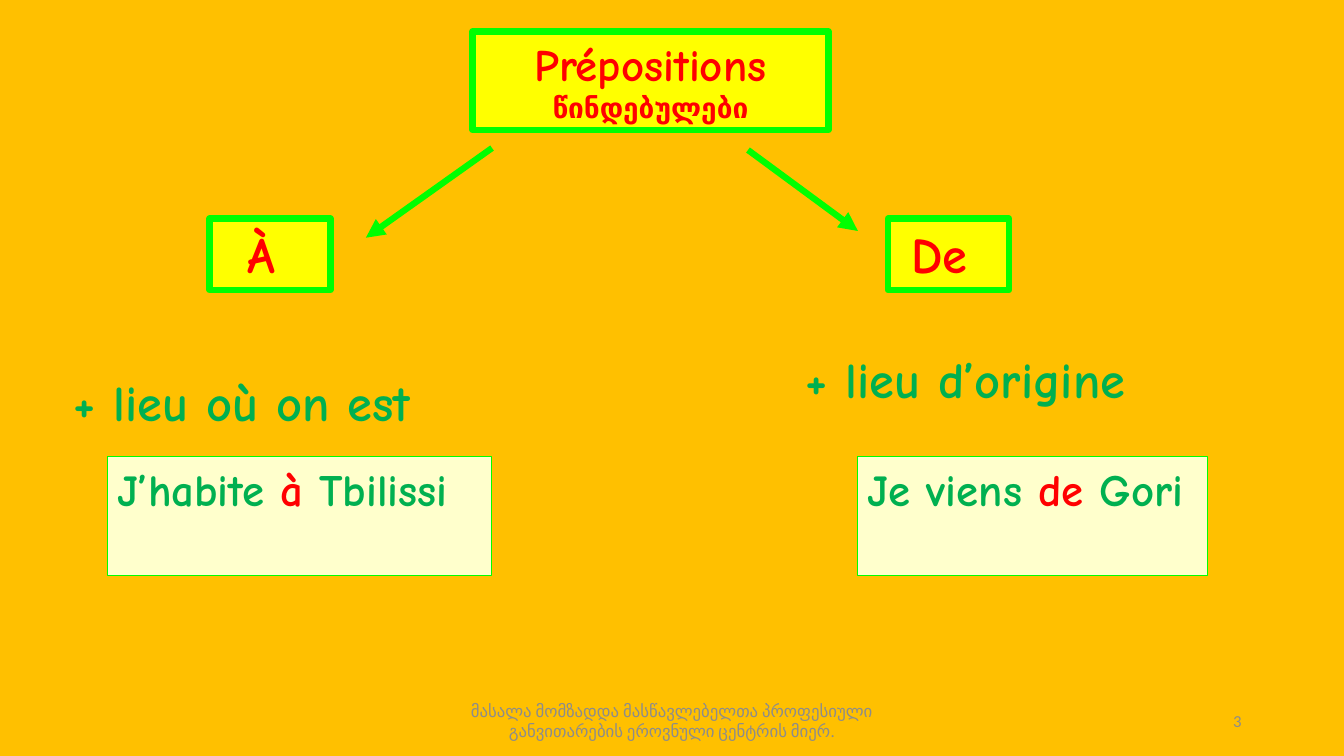
from lxml import etree
from pptx import Presentation
from pptx.dml.color import RGBColor
from pptx.enum.shapes import MSO_CONNECTOR, MSO_SHAPE
from pptx.enum.text import MSO_ANCHOR, MSO_AUTO_SIZE, PP_ALIGN
from pptx.oxml.ns import qn
from pptx.util import Cm, Pt

RECT = MSO_SHAPE.RECTANGLE
STRAIGHT = MSO_CONNECTOR.STRAIGHT
TOP, MIDDLE = MSO_ANCHOR.TOP, MSO_ANCHOR.MIDDLE
LEFT, CENTER, RIGHT = PP_ALIGN.LEFT, PP_ALIGN.CENTER, PP_ALIGN.RIGHT
NO_FIT = MSO_AUTO_SIZE.NONE

COLORS = {
    "back": "FFC000",
    "yellow": "FFFF00",
    "cream": "FFFFCC",
    "lime": "00FF00",
    "red": "FF0000",
    "green": "00B050",
    "grey": "8C8C8C",
}
HAND, PLAIN = "Comic Neue", "Calibri"


def color(name):
    return RGBColor.from_string(COLORS[name])


def style(run, size, tint, face=HAND):
    font = run.font
    font.name, font.size, font.bold = face, Pt(size), face == HAND
    font.color.rgb = color(tint)


def setup(frame, align, anchor=TOP):
    frame.word_wrap = True
    frame.auto_size = NO_FIT
    frame.vertical_anchor = anchor
    for para in frame.paragraphs:
        para.alignment = align


def paint(shape, fill, width):
    shape.fill.solid()
    shape.fill.fore_color.rgb = color(fill)
    shape.line.color.rgb = color("lime")
    shape.line.width = Pt(width)


def add_title(slide):
    title = slide.shapes.title
    title.left, title.top = Cm(11.91), Cm(0.79)
    title.width, title.height = Cm(8.97), Cm(2.49)
    paint(title, "yellow", 4.5)
    frame = title.text_frame
    frame.text = "Prépositions\nწინდებულები"
    setup(frame, CENTER)
    for para, size in zip(frame.paragraphs, (32, 20)):
        style(para.runs[0], size, "red")


def add_box(slide, place, fill, width, parts, size, align):
    """Add a filled box whose parts are (text, colour) runs on one line."""
    box = slide.shapes.add_shape(RECT, *map(Cm, place))
    box.shadow.inherit = False
    paint(box, fill, width)
    setup(box.text_frame, align)
    for text, tint in parts:
        run = box.text_frame.paragraphs[0].add_run()
        run.text = text
        style(run, size, tint)


def add_label(slide, place, text, size, tint, face=HAND, align=LEFT, anchor=TOP):
    frame = slide.shapes.add_textbox(*map(Cm, place)).text_frame
    frame.text = text
    setup(frame, align, anchor)
    style(frame.paragraphs[0].runs[0], size, tint, face)


def add_arrow(slide, ends):
    arrow = slide.shapes.add_connector(STRAIGHT, *map(Cm, ends))
    arrow.line.color.rgb = color("lime")
    arrow.line.width = Pt(4.5)
    props = arrow.element.spPr
    etree.SubElement(props.find(qn("a:ln")), qn("a:tailEnd"), type="triangle")
    etree.SubElement(props, qn("a:effectLst"))


def add_branch(slide, word, left, ends, rule, rule_at, sample, sample_at):
    """Add one preposition with its arrow, its use and an example."""
    add_arrow(slide, ends)
    add_box(slide, (left, 5.51, 3.05, 1.8), "yellow", 4.5,
            [(word, "red")], 36, CENTER)
    add_label(slide, (*rule_at, 10.8, 1.8), rule, 36, "green")
    start, width = sample_at
    parts = zip(sample, ("green", "red", "green"))
    add_box(slide, (start, 11.51, width, 3), "cream", 0.75, parts, 32, LEFT)


def main():
    deck = Presentation()
    deck.slide_width, deck.slide_height = Cm(33.87), Cm(19.05)
    slide = deck.slides.add_slide(deck.slide_layouts[5])
    slide.background.fill.solid()
    slide.background.fill.fore_color.rgb = color("back")

    add_title(slide)
    add_branch(slide, "À ", 5.28, (12.4, 3.73, 9.22, 5.99),
               "+ lieu où on est", (1.6, 9.22),
               ("J’habite ", "à", " Tbilissi"), (2.72, 9.68))
    add_branch(slide, "De ", 22.38, (18.85, 3.78, 21.62, 5.82),
               "+ lieu d’origine", (20.04, 8.66),
               ("Je viens ", "de", " Gori"), (21.62, 8.81))

    add_label(slide, (11.22, 17.66, 11.43, 1.01),
              "მასალა მომზადდა მასწავლებელთა პროფესიული "
              "განვითარების ეროვნული ცენტრის მიერ.",
              12, "grey", PLAIN, CENTER, MIDDLE)
    add_label(slide, (23.92, 17.66, 7.62, 1.01), "3",
              12, "grey", PLAIN, RIGHT, MIDDLE)
    deck.save("out.pptx")


if __name__ == "__main__":
    main()
